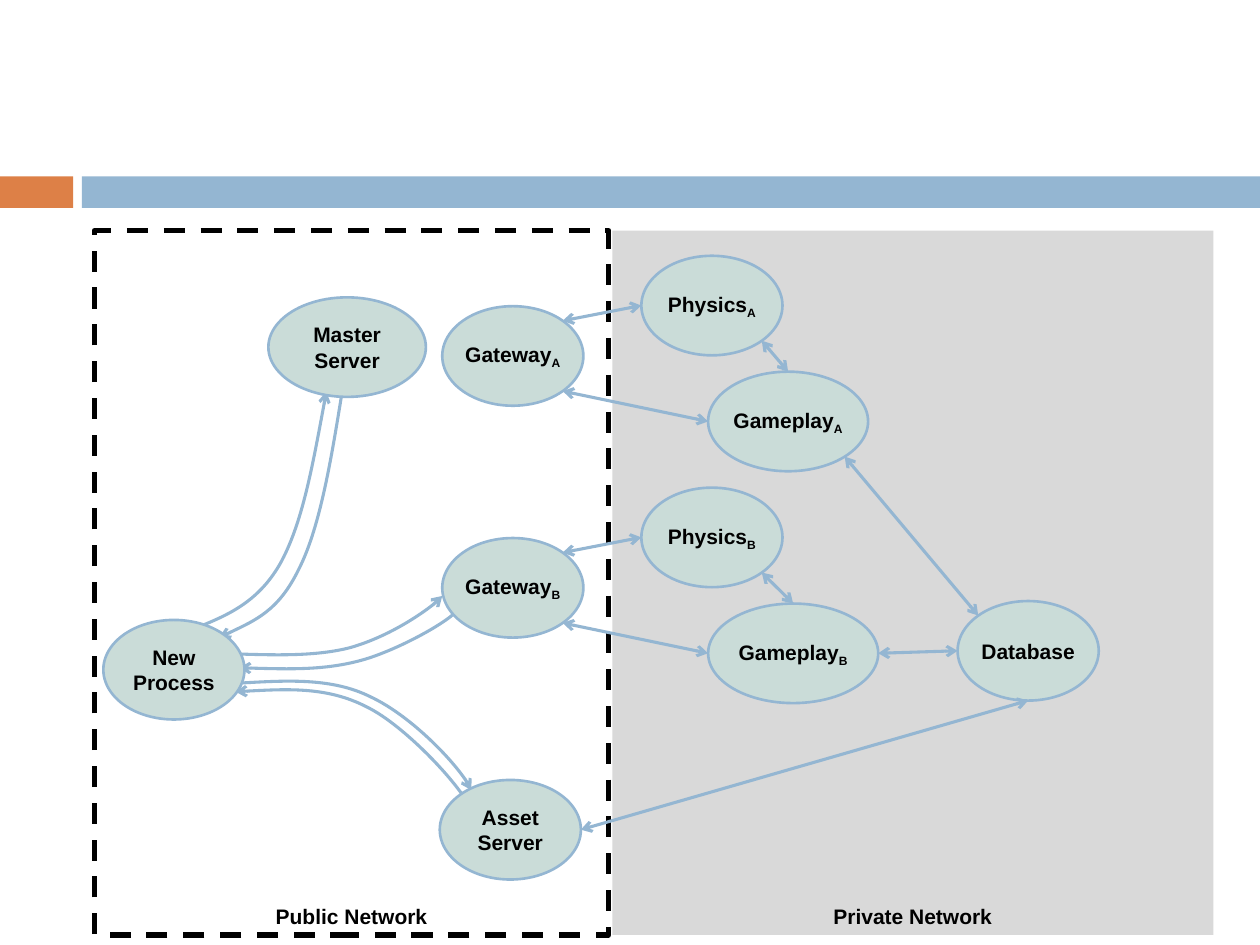
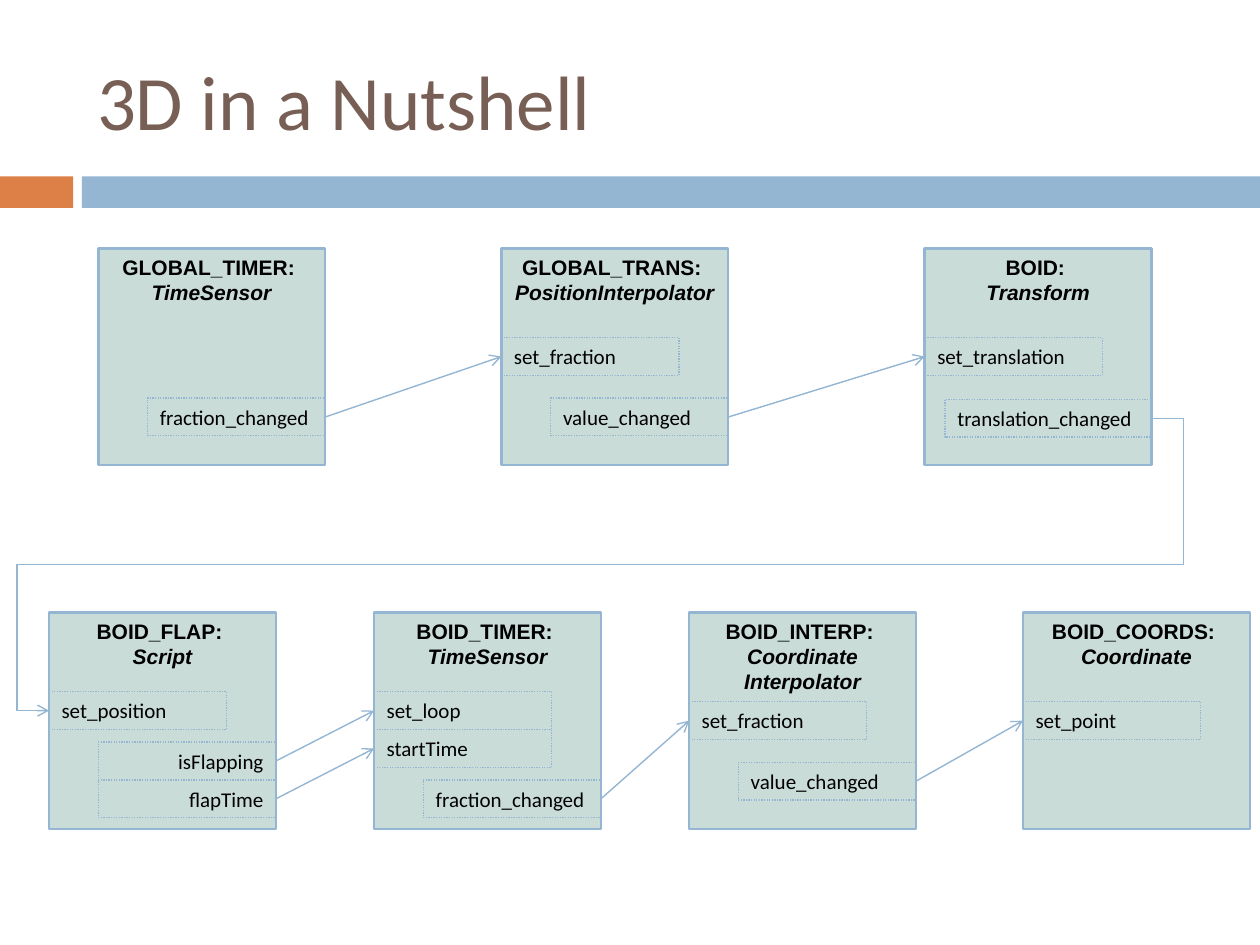
import math

import pptx
import pptx.dml.color
import pptx.enum.dml
import pptx.enum.shapes
import pptx.enum.text
import pptx.oxml
import pptx.oxml.ns
import pptx.util

Inches = pptx.util.Inches
RGBColor = pptx.dml.color.RGBColor
Dash = pptx.enum.dml.MSO_LINE
Shape = pptx.enum.shapes.MSO_SHAPE
Connector = pptx.enum.shapes.MSO_CONNECTOR
Anchor = pptx.enum.text.MSO_ANCHOR
Align = pptx.enum.text.PP_ALIGN

BLUE = RGBColor(0x94, 0xB6, 0xD2)
ORANGE = RGBColor(0xDD, 0x80, 0x47)
PALE_GREEN = RGBColor(0xCA, 0xDC, 0xD8)
GRAY = RGBColor(0xD9, 0xD9, 0xD9)
BROWN = RGBColor(0x77, 0x5F, 0x55)
BLACK = RGBColor(0, 0, 0)

BANDS = [((0, 1.4, 0.58, 0.25), ORANGE), ((0.65, 1.4, 9.35, 0.25), BLUE)]
TITLE_BOX = (0.67, 0.25, 8.92, 1.08)

# Network slide: name -> (text, subscript, left, top, width)
SERVER_HEIGHT = 0.79
SERVERS = {
    "master": ("Master\nServer", "", 2.13, 2.36, 1.25),
    "new": ("New Process", "", 0.82, 4.92, 1.12),
    "asset": ("Asset Server", "", 3.49, 6.19, 1.12),
    "database": ("Database", "", 7.6, 4.77, 1.12),
}
for letter, top, gameplay_width in [("A", 2.03, 1.27), ("B", 3.87, 1.35)]:
    SERVERS["gateway" + letter] = ("Gateway", letter, 3.51, top + 0.4, 1.12)
    SERVERS["physics" + letter] = ("Physics", letter, 5.09, top, 1.12)
    SERVERS["gameplay" + letter] = ("Gameplay", letter, 5.62, top + 0.92, gameplay_width)

# Compass angles on the ellipses, in degrees clockwise from the right
RIGHT, LOWER_RIGHT, BOTTOM, LEFT, UPPER_LEFT, TOP, UPPER_RIGHT = 0, 45, 90, 180, 225, 270, 315
SERVER_LINKS = [
    ("gameplayA", LOWER_RIGHT, "database", UPPER_LEFT),
    ("gameplayB", RIGHT, "database", LEFT),
    ("asset", RIGHT, "database", BOTTOM),
]
for letter in "AB":
    SERVER_LINKS += [
        ("gateway" + letter, LOWER_RIGHT, "gameplay" + letter, LEFT),
        ("gateway" + letter, UPPER_RIGHT, "physics" + letter, LEFT),
        ("gameplay" + letter, TOP, "physics" + letter, LOWER_RIGHT),
    ]

# Start point followed by two Bezier segments; the arrow end comes first
REQUESTS = [
    ("tail", [(1.54, 4.99), (1.79, 4.89), (2.04, 4.79), (2.22, 4.48),
              (2.4, 4.16), (2.49, 3.64), (2.59, 3.11)]),
    ("head", [(1.74, 5.06), (1.97, 4.95), (2.21, 4.85), (2.37, 4.52),
              (2.54, 4.19), (2.63, 3.64), (2.72, 3.08)]),
    ("tail", [(1.87, 5.19), (2.19, 5.2), (2.51, 5.21), (2.78, 5.14),
              (3.06, 5.06), (3.46, 4.81), (3.51, 4.73)]),
    ("head", [(1.9, 5.3), (2.24, 5.31), (2.58, 5.32), (2.87, 5.24),
              (3.16, 5.16), (3.59, 4.92), (3.64, 4.83)]),
    ("tail", [(1.93, 5.42), (2.29, 5.4), (2.64, 5.38), (2.94, 5.53),
              (3.24, 5.67), (3.68, 6.11), (3.74, 6.27)]),
    ("head", [(1.87, 5.49), (2.23, 5.47), (2.6, 5.45), (2.91, 5.61),
              (3.22, 5.76), (3.68, 6.26), (3.74, 6.43)]),
]

# Scene slide: name -> (type, left, top, ports); a port is (text, side, top, width)
NODE_WIDTH, NODE_HEIGHT = 1.8, 1.72
PORT_WIDTH, PORT_HEIGHT = 1.41, 0.3
UPPER_ROW, LOWER_ROW = 1.97, 4.86
NODES = {
    "GLOBAL_TIMER": ("TimeSensor", 0.78, UPPER_ROW,
                     [("fraction_changed", "out", 3.16, PORT_WIDTH)]),
    "GLOBAL_TRANS": ("PositionInterpolator", 3.98, UPPER_ROW,
                     [("set_fraction", "in", 2.68, PORT_WIDTH),
                      ("value_changed", "out", 3.16, PORT_WIDTH)]),
    "BOID": ("Transform", 7.34, UPPER_ROW,
             [("set_translation", "in", 2.68, PORT_WIDTH),
              ("translation_changed", "out", 3.17, 1.64)]),
    "BOID_FLAP": ("Script", 0.39, LOWER_ROW,
                  [("set_position", "in", 5.49, PORT_WIDTH),
                   ("isFlapping", "out", 5.89, PORT_WIDTH),
                   ("flapTime", "out", 6.19, PORT_WIDTH)]),
    "BOID_TIMER": ("TimeSensor", 2.97, LOWER_ROW,
                   [("set_loop", "in", 5.49, PORT_WIDTH),
                    ("startTime", "in", 5.79, PORT_WIDTH),
                    ("fraction_changed", "out", 6.19, PORT_WIDTH)]),
    "BOID_INTERP": ("Coordinate Interpolator", 5.47, LOWER_ROW,
                    [("set_fraction", "in", 5.57, PORT_WIDTH),
                     ("value_changed", "out", 6.05, PORT_WIDTH)]),
    "BOID_COORDS": ("Coordinate", 8.12, LOWER_ROW,
                    [("set_point", "in", 5.57, PORT_WIDTH)]),
}
RIGHT_ALIGNED_PORTS = {"isFlapping", "flapTime"}
ROUTES = [
    ("GLOBAL_TIMER", "fraction_changed", "GLOBAL_TRANS", "set_fraction"),
    ("GLOBAL_TRANS", "value_changed", "BOID", "set_translation"),
    ("BOID_FLAP", "isFlapping", "BOID_TIMER", "set_loop"),
    ("BOID_FLAP", "flapTime", "BOID_TIMER", "startTime"),
    ("BOID_TIMER", "fraction_changed", "BOID_INTERP", "set_fraction"),
    ("BOID_INTERP", "value_changed", "BOID_COORDS", "set_point"),
]
WRAP_ROUTE = ("BOID", "translation_changed", "BOID_FLAP", "set_position")
WRAP_MARGIN = 0.25


def inches(values):
    return [Inches(value) for value in values]


def write(text_frame, text, font="Arial", size=12, color=BLACK, bold=True, subscript="",
          italic_lines=(), align=Align.CENTER, anchor=Anchor.MIDDLE, side_inset=0.1):
    """Fill the frame with one paragraph per line; a subscript follows the last line."""
    text_frame.word_wrap = True
    text_frame.vertical_anchor = anchor
    text_frame.margin_left = text_frame.margin_right = Inches(side_inset)
    text_frame.text = text
    if subscript:
        run = text_frame.paragraphs[-1].add_run()
        run.text = subscript
        run.font._element.set("baseline", "-25000")
    for index, paragraph in enumerate(text_frame.paragraphs):
        paragraph.alignment = align
        for run in paragraph.runs:
            run.font.name = font
            run.font.size = pptx.util.Pt(size)
            run.font.color.rgb = color
            run.font.bold = bold
            run.font.italic = index in italic_lines


def style_line(line, color, width, dash=None):
    line.color.rgb = color
    line.width = pptx.util.Pt(width)
    if dash:
        line.dash_style = dash


def add_box(slide, box, kind=Shape.RECTANGLE, fill=None, line=None):
    """Add a shape; line is (color, width) or (color, width, dash)."""
    shape = slide.shapes.add_shape(kind, *inches(box))
    shape.shadow.inherit = False
    if fill is None:
        shape.fill.background()
    else:
        shape.fill.solid()
        shape.fill.fore_color.rgb = fill
    if line is None:
        shape.line.fill.background()
    else:
        style_line(shape.line, *line)
    return shape


def add_arrowheads(line, ends):
    line_properties = line._get_or_add_ln()
    for end in ends:
        arrow = pptx.oxml.parse_xml(f'<a:{end}End {pptx.oxml.ns.nsdecls("a")} type="arrow"/>')
        line_properties.append(arrow)


def add_arrow(slide, start, end, width, ends=("tail",), kind=Connector.STRAIGHT):
    connector = slide.shapes.add_connector(kind, *inches(start + end))
    style_line(connector.line, BLUE, width)
    add_arrowheads(connector.line, ends)
    effects = pptx.oxml.parse_xml(f'<a:effectLst {pptx.oxml.ns.nsdecls("a")}/>')
    connector._element.spPr.append(effects)
    return connector


def add_curve(slide, points, arrow_end):
    """Draw a polygon through the points, then turn each three lines into a Bezier segment."""
    builder = slide.shapes.build_freeform(*inches(points[0]))
    builder.add_line_segments([inches(point) for point in points[1:]], close=False)
    curve = builder.convert_to_shape()
    curve.shadow.inherit = False
    curve.fill.background()
    style_line(curve.line, BLUE, 1.75)
    add_arrowheads(curve.line, [arrow_end])
    lines = curve._element.xpath(".//a:lnTo")
    for first in range(0, len(lines), 3):
        bezier = pptx.oxml.parse_xml(f'<a:cubicBezTo {pptx.oxml.ns.nsdecls("a")}/>')
        lines[first].addprevious(bezier)
        for line in lines[first:first + 3]:
            bezier.append(line[0])
            line.getparent().remove(line)


def move_bands_to_layout(slide, layout):
    for box, color in BANDS:
        band = add_box(slide, box, fill=color)
        layout.shapes.element.append(band._element)


def place_title(layout):
    title = layout.placeholders[0]
    title.left, title.top, title.width, title.height = inches(TITLE_BOX)


def server_point(name, angle):
    _, _, left, top, width = SERVERS[name]
    radians = math.radians(angle)
    return (left + width / 2 * (1 + math.cos(radians)),
            top + SERVER_HEIGHT / 2 * (1 + math.sin(radians)))


def build_network(slide):
    title = slide.shapes.title
    title._element.getparent().remove(title._element)
    public = add_box(slide, (0.75, 1.83, 4.08, 5.59), line=(BLACK, 3, Dash.DASH))
    write(public.text_frame, "Public Network", anchor=Anchor.BOTTOM)
    private = add_box(slide, (4.86, 1.83, 4.77, 5.59), fill=GRAY)
    write(private.text_frame, "Private Network", anchor=Anchor.BOTTOM)
    for arrow_end, points in REQUESTS:
        add_curve(slide, points, arrow_end)
    for text, subscript, left, top, width in SERVERS.values():
        server = add_box(slide, (left, top, width, SERVER_HEIGHT), Shape.OVAL,
                         PALE_GREEN, (BLUE, 1.5))
        write(server.text_frame, text, subscript=subscript, side_inset=0)
    for source, source_angle, target, target_angle in SERVER_LINKS:
        add_arrow(slide, server_point(source, source_angle),
                  server_point(target, target_angle), 1.75, ("head", "tail"))


def port_point(node, port_text):
    """Return the middle of the node's edge beside the port."""
    _, left, _, ports = NODES[node]
    side, top = next(port[1:3] for port in ports if port[0] == port_text)
    return (left + (NODE_WIDTH if side == "out" else 0), top + PORT_HEIGHT / 2)


def add_wrap_route(slide):
    """Lead the route round the right and left margins, between the two rows."""
    start, end = port_point(*WRAP_ROUTE[:2]), port_point(*WRAP_ROUTE[2:])
    connector = add_arrow(slide, start, end, 0.79, kind=Connector.ELBOW)
    overshoot = WRAP_MARGIN / (start[0] - end[0])
    geometry = connector._element.xpath(".//a:prstGeom")[0]
    geometry.set("prst", "bentConnector5")
    for child in list(geometry):
        geometry.remove(child)
    guides = "".join(f'<a:gd name="adj{number}" fmla="val {round(share * 100000)}"/>'
                     for number, share in enumerate((-overshoot, 0.5, 1 + overshoot), 1))
    geometry.append(pptx.oxml.parse_xml(
        f'<a:avLst {pptx.oxml.ns.nsdecls("a")}>{guides}</a:avLst>'))


def build_scene(slide):
    write(slide.shapes.title.text_frame, "3D in a Nutshell", font="Calibri", size=44,
          color=BROWN, bold=False, align=Align.LEFT)
    for name, (node_type, left, top, ports) in NODES.items():
        node = add_box(slide, (left, top, NODE_WIDTH, NODE_HEIGHT),
                       fill=PALE_GREEN, line=(BLUE, 1.5))
        write(node.text_frame, f"{name}: \n{node_type}", italic_lines=[1], anchor=Anchor.TOP)
        for text, side, port_top, width in ports:
            port_left = left + (NODE_WIDTH - width if side == "out" else 0)
            port = add_box(slide, (port_left, port_top, width, PORT_HEIGHT),
                           line=(BLUE, 0.75, Dash.ROUND_DOT))
            align = Align.RIGHT if text in RIGHT_ALIGNED_PORTS else Align.LEFT
            write(port.text_frame, text, font="Calibri", bold=False, align=align,
                  anchor=Anchor.TOP)
            port.text_frame.auto_size = pptx.enum.text.MSO_AUTO_SIZE.SHAPE_TO_FIT_TEXT
    for source, output, target, target_input in ROUTES:
        add_arrow(slide, port_point(source, output), port_point(target, target_input), 0.79)
    add_wrap_route(slide)


def main():
    presentation = pptx.Presentation()
    presentation.slide_width, presentation.slide_height = inches((10, 7.5))
    layout = presentation.slide_layouts.get_by_name("Title Only")
    place_title(layout)
    network = presentation.slides.add_slide(layout)
    move_bands_to_layout(network, layout)
    build_network(network)
    build_scene(presentation.slides.add_slide(layout))
    presentation.save("out.pptx")


if __name__ == "__main__":
    main()
